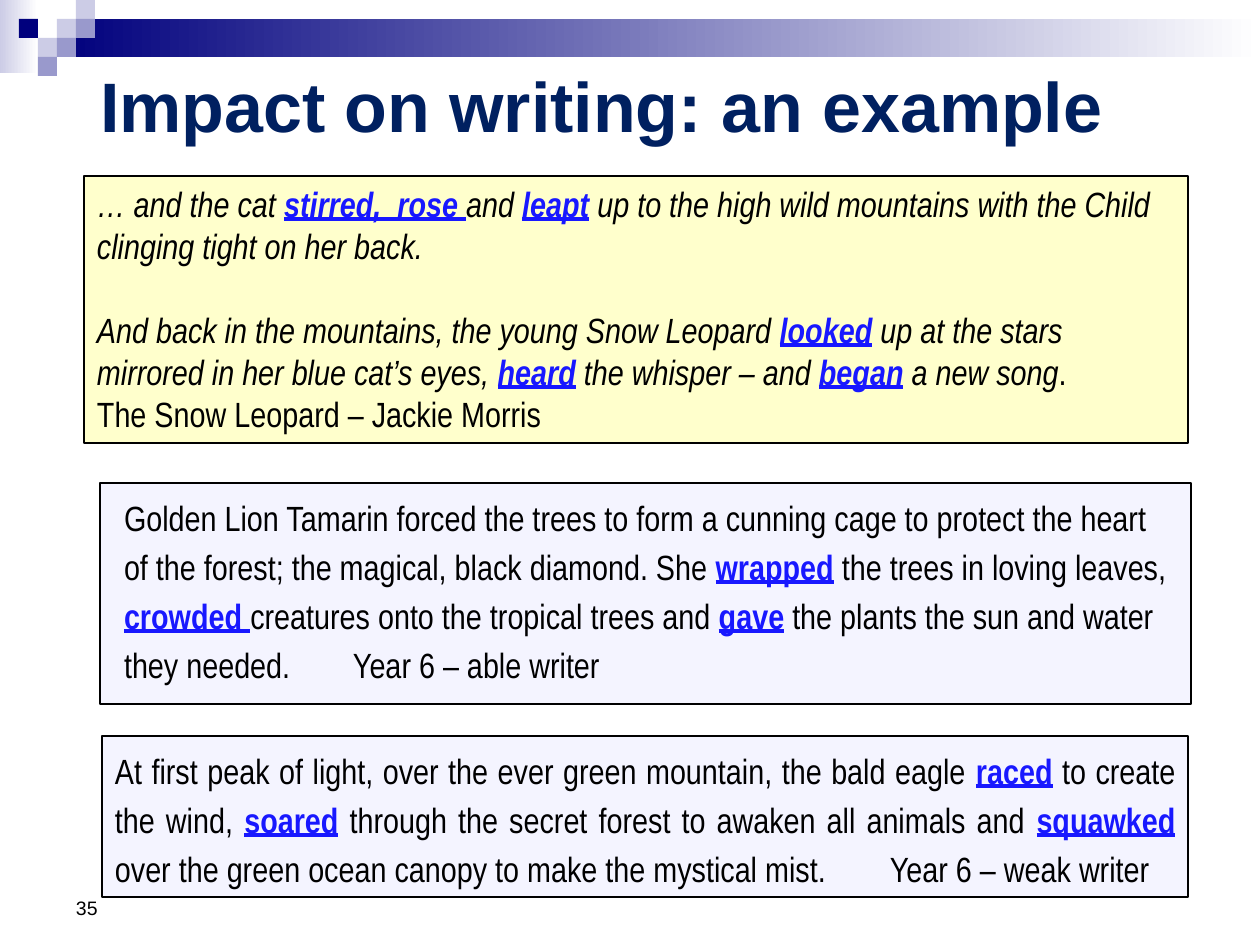
from lxml import etree
from pptx import Presentation
from pptx.dml.color import RGBColor
from pptx.enum.shapes import MSO_SHAPE
from pptx.enum.text import MSO_ANCHOR, PP_ALIGN
from pptx.oxml.ns import qn
from pptx.util import Emu, Pt

RECTANGLE = MSO_SHAPE.RECTANGLE
TOP, MIDDLE, BOTTOM = MSO_ANCHOR.TOP, MSO_ANCHOR.MIDDLE, MSO_ANCHOR.BOTTOM
LEFT, JUSTIFY = PP_ALIGN.LEFT, PP_ALIGN.JUSTIFY
PX_PER_INCH = 126
CELL = 19
INSET = 13
NAVY, LILAC, VIOLET, WHITE = "00007D", "CCCCE6", "9999CC", "FFFFFF"
BLACK, VERB_BLUE, TITLE_BLUE = "000000", "1818FF", "002060"
CREAM, PALE_BLUE = "FFFFCC", "F4F4FF"
SQUARES = [(2, 1, LILAC), (3, 0, LILAC), (3, 1, VIOLET), (1, 2, LILAC),
           (0, 1, NAVY), (2, 2, VIOLET), (1, 3, VIOLET)]

PUBLISHED = [
    "… and the cat *stirred,  rose *and *leapt* up to the high wild mountains "
    "with the Child clinging tight on her back.",
    "And back in the mountains, the young Snow Leopard *looked* up at the stars "
    "mirrored in her blue cat’s eyes, *heard* the whisper – and *began* a new song",
]
SOURCE = "The Snow Leopard – Jackie Morris"
ABLE = ("Golden Lion Tamarin forced the trees to form a cunning cage to protect the "
        "heart of the forest; the magical, black diamond. She *wrapped* the trees in "
        "loving leaves, *crowded *creatures onto the tropical trees and *gave* the "
        "plants the sun and water they needed.\tYear 6 – able writer")
WEAK = ("At first peak of light, over the ever green mountain, the bald eagle *raced* "
        "to create the wind, *soared* through the secret forest to awaken all animals "
        "and *squawked* over the green ocean canopy to make the mystical mist."
        "\tYear 6 – weak writer")


def px(length):
    """Turn pixels into EMU."""
    return Emu(round(length * 914400 / PX_PER_INCH))


def color(hex_string):
    """Turn a hex string into a colour."""
    return RGBColor.from_string(hex_string)


def add_rectangle(slide, box, fill, line=None, fade_to=None):
    """Add a flat or left-to-right fading rectangle."""
    shape = slide.shapes.add_shape(RECTANGLE, *map(px, box))
    shape.shadow.inherit = False
    if fade_to:
        shape.fill.gradient()
        shape.fill.gradient_angle = 0
        for stop, shade in zip(shape.fill.gradient_stops, (fill, fade_to)):
            stop.color.rgb = color(shade)
    else:
        shape.fill.solid()
        shape.fill.fore_color.rgb = color(fill)
    if line:
        shape.line.color.rgb = color(line)
        shape.line.width = Pt(0.75)
    else:
        shape.line.fill.background()
    return shape


def set_frame(shape, anchor, left_inset=INSET):
    """Prepare a wrapping text frame and return it."""
    frame = shape.text_frame
    frame.word_wrap = True
    frame.vertical_anchor = anchor
    frame.margin_left = px(left_inset)
    return frame


def add_run(paragraph, text, size, font="Arial Narrow", shade=BLACK,
            bold=False, italic=False, underline=False):
    """Add one styled run."""
    run = paragraph.add_run()
    run.text = text
    run.font.size = Pt(size)
    run.font.name = font
    run.font.color.rgb = color(shade)
    run.font.bold, run.font.italic, run.font.underline = bold, italic, underline


def add_passage(paragraph, passage, italic=False):
    """Add a passage whose starred verbs are bold, blue and underlined."""
    for index, text in enumerate(passage.split("*")):
        verb = index % 2 == 1
        add_run(paragraph, text, 20, shade=VERB_BLUE if verb else BLACK,
                bold=verb, italic=italic, underline=verb)


def add_tab_stop(paragraph, position):
    """Set a left tab stop on a paragraph."""
    properties = paragraph._p.get_or_add_pPr()
    tabs = etree.SubElement(properties, qn("a:tabLst"))
    etree.SubElement(tabs, qn("a:tab"), pos=str(px(position)), algn="l")


def add_banner(slide, box):
    """Draw the fading bar and its mosaic of squares."""
    left, top, width, height = box
    add_rectangle(slide, (left, top, 2 * CELL, height), LILAC, fade_to=WHITE)
    bar_left = left + 4 * CELL - CELL
    add_rectangle(slide, (bar_left, top + CELL, left + width - bar_left, 2 * CELL),
                  NAVY, fade_to=WHITE)
    for column, row, shade in SQUARES:
        add_rectangle(slide, (left + CELL * (column + 1), top + CELL * row, CELL, CELL),
                      shade)


def add_label(slide, box, text, size, anchor, shade=BLACK, bold=False):
    """Add a one-line Arial text box."""
    frame = set_frame(slide.shapes.add_textbox(*map(px, box)), anchor)
    add_run(frame.paragraphs[0], text, size, "Arial", shade, bold)


def add_published_extract(slide, box):
    """Add the book extract with its source line."""
    frame = set_frame(add_rectangle(slide, box, CREAM, BLACK), TOP)
    first, second, source = frame.paragraphs[0], frame.add_paragraph(), frame.add_paragraph()
    for paragraph, passage in zip((first, second), PUBLISHED):
        add_passage(paragraph, passage, italic=True)
    add_run(second, ".", 20)
    add_run(source, SOURCE, 20)
    second.space_before = Pt(24)
    for paragraph in frame.paragraphs:
        paragraph.alignment = LEFT


def add_pupil_extract(slide, box, passage, alignment, left_inset, tab):
    """Add a pupil's writing with the writer's level after a tab."""
    frame = set_frame(add_rectangle(slide, box, PALE_BLUE, BLACK), TOP, left_inset)
    paragraph = frame.paragraphs[0]
    paragraph.alignment = alignment
    paragraph.line_spacing = Pt(28)
    add_tab_stop(paragraph, tab)
    add_passage(paragraph, passage)


def main():
    """Build and save the slide."""
    presentation = Presentation()
    presentation.slide_width, presentation.slide_height = px(1260), px(945)
    slide = presentation.slides.add_slide(presentation.slide_layouts[6])
    add_banner(slide, (0, 0, 1260, 73))
    add_label(slide, (87, 26, 1087, 158), "Impact on writing: an example", 40,
              MIDDLE, TITLE_BLUE, True)
    add_pupil_extract(slide, (100, 483, 1091, 221), ABLE, LEFT, 24, 229)
    add_label(slide, (63, 861, 294, 65), "35", 11.1, BOTTOM)
    add_pupil_extract(slide, (102, 736, 1086, 161), WEAK, JUSTIFY, INSET, 775)
    add_published_extract(slide, (84, 176, 1104, 267))
    presentation.save("out.pptx")


if __name__ == "__main__":
    main()
